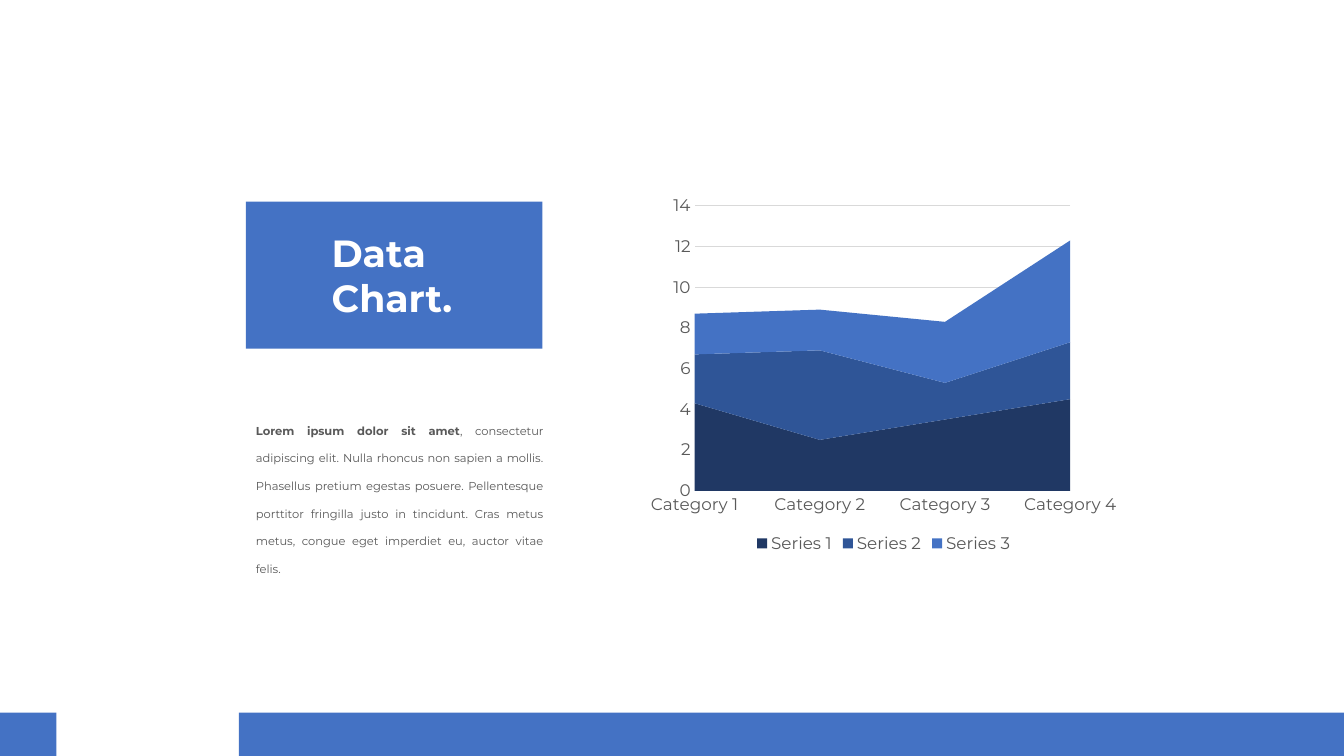
from typing import NamedTuple

from pptx import Presentation
from pptx import util as u
from pptx.chart.data import CategoryChartData
from pptx.dml.color import RGBColor
from pptx.enum import chart as ch
from pptx.enum import shapes, text
from pptx.oxml.ns import qn

FACE = "Montserrat"
BLUE, NAVY, MID = "4472C4", "203864", "2F5597"
GRAY, RULE, WHITE = "595959", "D9D9D9", "FFFFFF"


class Box(NamedTuple):
    left: float
    top: float
    width: float
    height: float

    def place(self) -> list:
        return [u.Inches(side) for side in self]


class Series(NamedTuple):
    name: str
    vals: tuple
    color: str


PANELS = [
    Box(2.37, 7.07, 10.96, 0.43),
    Box(0, 7.07, 0.56, 0.43),
    Box(2.44, 2, 2.94, 1.46),
]
CATS = [f"Category {n}" for n in range(1, 5)]
SERIES = [
    Series("Series 1", (4.3, 2.5, 3.5, 4.5), NAVY),
    Series("Series 2", (2.4, 4.4, 1.8, 2.8), MID),
    Series("Series 3", (2, 2, 3, 5), BLUE),
]
LEAD = "Lorem ipsum dolor sit amet"
BODY = (
    ", consectetur adipiscing elit. Nulla rhoncus non sapien a mollis. "
    "Phasellus pretium egestas posuere. Pellentesque porttitor fringilla "
    "justo in tincidunt. Cras metus metus, congue eget imperdiet eu, "
    "auctor vitae felis."
)


def rgb(code: str) -> RGBColor:
    return RGBColor.from_string(code)


def style(font, size: float, color: str) -> None:
    font.name = FACE
    font.size = u.Pt(size)
    font.color.rgb = rgb(color)


def rule(line) -> None:
    """Give a chart line its thin pale look."""
    line.color.rgb = rgb(RULE)
    line.width = u.Pt(0.75)


def add_panel(slide, box: Box) -> None:
    panel = slide.shapes.add_shape(shapes.MSO_SHAPE.RECTANGLE, *box.place())
    panel.shadow.inherit = False
    panel.fill.solid()
    panel.fill.fore_color.rgb = rgb(BLUE)
    panel.line.fill.background()


def add_frame(slide, box: Box):
    frame = slide.shapes.add_textbox(*box.place()).text_frame
    frame.word_wrap = True
    frame.auto_size = text.MSO_AUTO_SIZE.SHAPE_TO_FIT_TEXT
    return frame


def add_title(slide) -> None:
    frame = add_frame(slide, Box(3.19, 2.23, 1.57, 1.01))
    frame.text = "Data\nChart."
    for para in frame.paragraphs:
        style(para.font, 27, WHITE)
        para.font.bold = True


def add_body(slide) -> None:
    para = add_frame(slide, Box(2.44, 4.02, 3.05, 1.72)).paragraphs[0]
    para.alignment = text.PP_ALIGN.JUSTIFY
    para.line_spacing = 2.0
    style(para.font, 8.2, GRAY)
    for words, bold in ((LEAD, True), (BODY, False)):
        run = para.add_run()
        run.text = words
        run.font.bold = bold


def add_areas(slide) -> None:
    data = CategoryChartData()
    data.categories = CATS
    for item in SERIES:
        data.add_series(item.name, item.vals)
    chart = slide.shapes.add_chart(
        ch.XL_CHART_TYPE.AREA_STACKED, *Box(6.36, 1.87, 4.81, 3.66).place(), data
    ).chart
    chart.has_title = False
    style(chart.font, 12, GRAY)

    plot = chart.plots[0]
    plot.vary_by_categories = False
    for area, item in zip(plot.series, SERIES):
        area.format.fill.solid()
        area.format.fill.fore_color.rgb = rgb(item.color)

    for axis in (chart.category_axis, chart.value_axis):
        axis.major_tick_mark = axis.minor_tick_mark = ch.XL_TICK_MARK.NONE
        style(axis.tick_labels.font, 12, GRAY)
    rule(chart.category_axis.format.line)
    scale = chart.value_axis
    scale.format.line.fill.background()
    scale.has_major_gridlines = True
    rule(scale.major_gridlines.format.line)
    scale.minimum_scale, scale.maximum_scale, scale.major_unit = 0, 14, 2
    # The areas start right on the value axis.
    for cross in chart.element.iter(qn("c:crossBetween")):
        cross.set("val", "midCat")

    chart.has_legend = True
    chart.legend.position = ch.XL_LEGEND_POSITION.BOTTOM
    chart.legend.include_in_layout = False
    style(chart.legend.font, 12, GRAY)


def main() -> None:
    deck = Presentation()
    deck.slide_width, deck.slide_height = u.Inches(13.33), u.Inches(7.5)
    slide = deck.slides.add_slide(deck.slide_layouts[6])
    for box in PANELS:
        add_panel(slide, box)
    add_areas(slide)
    add_title(slide)
    add_body(slide)
    deck.save("out.pptx")


if __name__ == "__main__":
    main()
